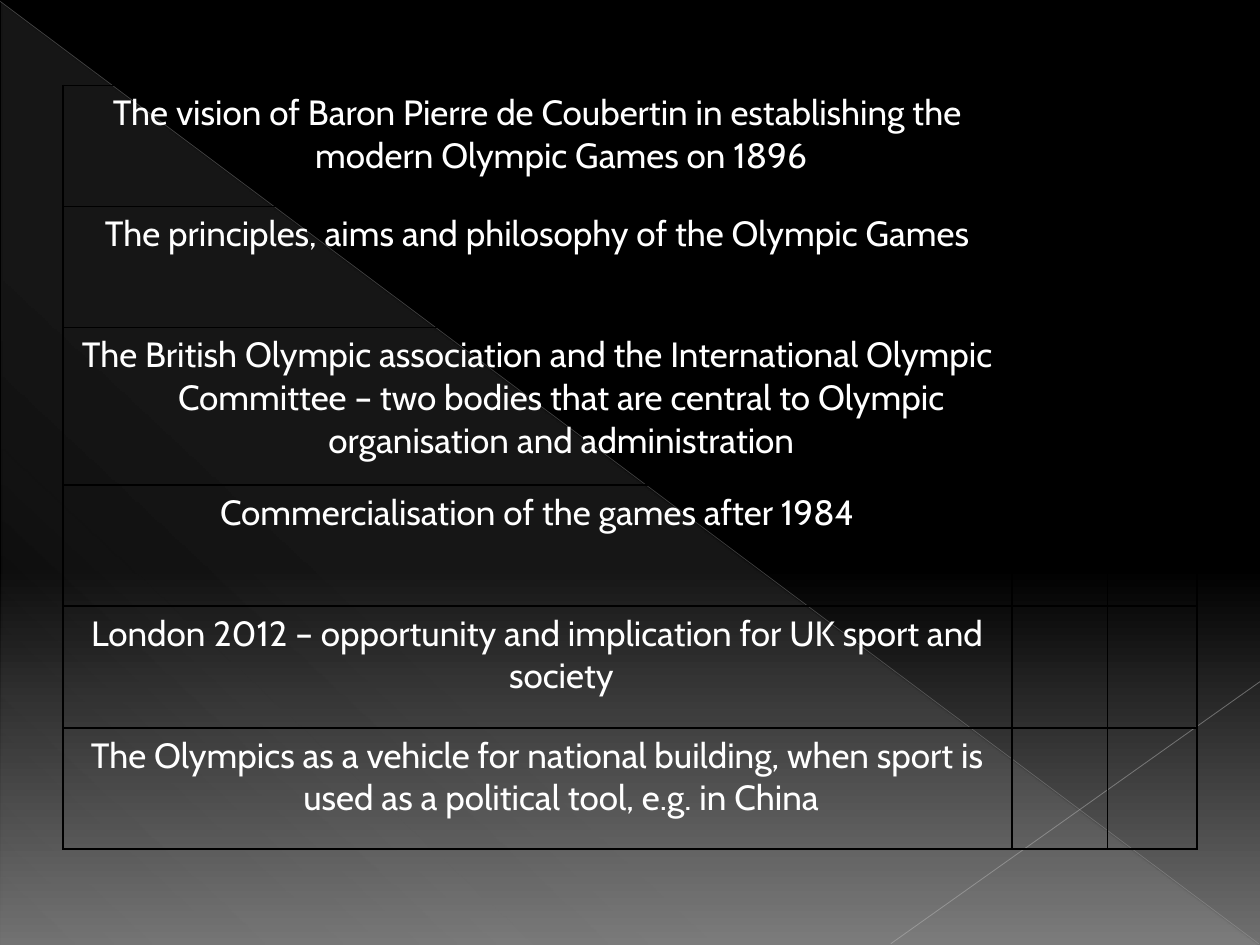
from typing import NamedTuple

from lxml.etree import SubElement
from pptx import Presentation
from pptx.dml.color import RGBColor
from pptx.enum.shapes import MSO_CONNECTOR as Connector, MSO_SHAPE as Shape
from pptx.enum.text import PP_ALIGN as Align
from pptx.oxml.ns import qn
from pptx.util import Inches, Pt

BLACK = RGBColor(0x00, 0x00, 0x00)
GREY = RGBColor(0x70, 0x70, 0x70)
PALE = RGBColor(0xF8, 0xF8, 0xF8)
WHITE = RGBColor(0xFF, 0xFF, 0xFF)
LONG_LINE = RGBColor(0xB4, 0xB4, 0xB4)
SHORT_LINE = RGBColor(0xBD, 0xBD, 0xBD)


class Stop(NamedTuple):
    position: int
    color: RGBColor
    opacity: int = 100


class Diagonal(NamedTuple):
    start: tuple[float, float]
    end: tuple[float, float]
    color: RGBColor
    width: float
    opacity: int


class Topic(NamedTuple):
    text: str
    height: float = 0.96


DIAGONALS = [
    Diagonal((0, 0.01), (9.99, 7.49), LONG_LINE, 0.39, 35),
    Diagonal((10, 5.41), (7.07, 7.49), SHORT_LINE, 0.47, 45),
]
TOPICS = [
    Topic("The vision of Baron Pierre de Coubertin in establishing the modern "
          "Olympic Games on 1896"),
    Topic("The principles, aims and philosophy of the Olympic Games"),
    Topic("The British Olympic association and the International Olympic Committee – "
          "two bodies that are central to Olympic organisation and administration", 1.25),
    Topic("Commercialisation of the games after 1984"),
    Topic("London 2012 – opportunity and implication for UK sport and society", 0.97),
    Topic("The Olympics as a vehicle for national building, when sport is used as a "
          "political tool, e.g. in China"),
]
COLUMN_WIDTHS = [7.53, 0.76, 0.71]


def add_color(parent, color: RGBColor, opacity: int = 100) -> None:
    tag = SubElement(parent, qn("a:srgbClr"), val=str(color))
    if opacity < 100:
        SubElement(tag, qn("a:alpha"), val=str(opacity * 1000))


def set_gradient(fill, owner, stops: list[Stop], angle: int) -> None:
    fill.gradient()
    gradient = next(owner.iter(qn("a:gradFill")))
    stop_list = gradient.find(qn("a:gsLst"))
    for old_stop in list(stop_list):
        stop_list.remove(old_stop)
    for stop in stops:
        tag = SubElement(stop_list, qn("a:gs"), pos=str(stop.position * 1000))
        add_color(tag, stop.color, stop.opacity)
    gradient.find(qn("a:lin")).set("ang", str(angle * 60000))


def add_diagonal(page, diagonal: Diagonal) -> None:
    ends = [Inches(value) for value in diagonal.start + diagonal.end]
    connector = page.shapes.add_connector(Connector.STRAIGHT, *ends)
    connector.line.width = Pt(diagonal.width)
    connector.line.color.rgb = diagonal.color
    properties = connector.element.spPr
    color = next(properties.iter(qn("a:srgbClr")))
    SubElement(color, qn("a:alpha"), val=str(diagonal.opacity * 1000))
    SubElement(properties, qn("a:effectLst"))


def style_cell(cell) -> None:
    properties = cell._tc.get_or_add_tcPr()
    for side in ("a:lnL", "a:lnR", "a:lnT", "a:lnB"):
        border = SubElement(properties, qn(side), w=str(Pt(1)))
        add_color(SubElement(border, qn("a:solidFill")), BLACK)
    cell.fill.background()


def write_topic(cell, text: str) -> None:
    para = cell.text_frame.paragraphs[0]
    para.text = text
    para.alignment = Align.CENTER
    properties = para._p.get_or_add_pPr()
    properties.set("marL", str(Inches(0.38)))
    properties.set("indent", str(Inches(-0.38)))
    para.font.name = "Cabin"
    para.font.size = Pt(20)
    para.font.color.rgb = WHITE


def add_topic_table(page) -> None:
    height = sum(topic.height for topic in TOPICS)
    table = page.shapes.add_table(
        len(TOPICS), len(COLUMN_WIDTHS), Inches(0.5), Inches(0.68),
        Inches(sum(COLUMN_WIDTHS)), Inches(height)).table
    table.first_row = table.horz_banding = False
    for column, width in zip(table.columns, COLUMN_WIDTHS):
        column.width = Inches(width)
    for row, topic in zip(table.rows, TOPICS):
        row.height = Inches(topic.height)
        for cell in row.cells:
            style_cell(cell)
        write_topic(row.cells[0], topic.text)


def main() -> None:
    deck = Presentation()
    deck.slide_width, deck.slide_height = Inches(10), Inches(7.5)
    page = deck.slides.add_slide(deck.slide_layouts[6])

    # Backdrop
    set_gradient(page.background.fill, page.element,
                 [Stop(0, BLACK), Stop(60, BLACK), Stop(100, GREY)], 90)
    triangle = page.shapes.add_shape(
        Shape.RIGHT_TRIANGLE, Inches(0.01), Inches(0.02), Inches(9.98), Inches(7.48))
    triangle.shadow.inherit = False
    triangle.line.fill.background()
    set_gradient(triangle.fill, triangle.element,
                 [Stop(0, PALE, 10), Stop(70, PALE, 8), Stop(100, PALE, 1)], 133)
    for diagonal in DIAGONALS:
        add_diagonal(page, diagonal)

    # Topics
    add_topic_table(page)
    deck.save("out.pptx")


if __name__ == "__main__":
    main()
